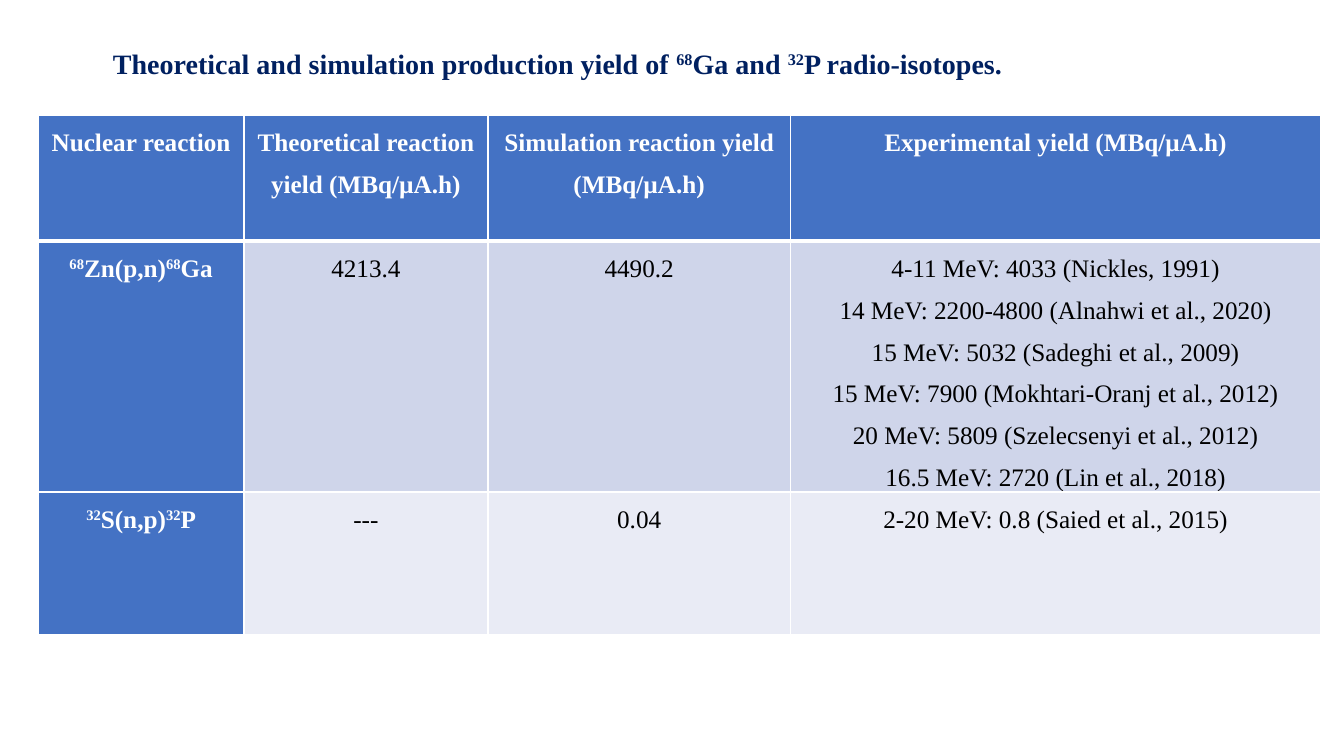
"""Build a slide with a table of radio-isotope production yields."""
from lxml.etree import SubElement
from pptx import Presentation
from pptx.dml.color import RGBColor
from pptx.enum.text import MSO_ANCHOR, PP_ALIGN
from pptx.oxml.ns import qn
from pptx.util import Inches, Pt

HUES = {"navy": "002060", "blue": "4472C4", "white": "FFFFFF",
        "black": "000000", "odd": "CFD5EA", "even": "E9EBF5"}
COLS = [2.04, 2.42, 3, 5.26]
ROWS = [1.25, 2.33, 1.42]
DATA = [
    ["Nuclear reaction", "Theoretical reaction yield (MBq/µA.h)",
     "Simulation reaction yield (MBq/µA.h)", "Experimental yield (MBq/μA.h)"],
    ["^68^Zn(p,n)^68^Ga", "4213.4", "4490.2",
     "4-11 MeV: 4033 (Nickles, 1991)\n"
     "14 MeV: 2200-4800 (Alnahwi et al., 2020)\n"
     "15 MeV: 5032 (Sadeghi et al., 2009)\n"
     "15 MeV: 7900 (Mokhtari-Oranj et al., 2012)\n"
     "20 MeV: 5809 (Szelecsenyi et al., 2012)\n"
     "16.5 MeV: 2720 (Lin et al., 2018)"],
    ["^32^S(n,p)^32^P", "---", "0.04", "2-20 MeV: 0.8 (Saied et al., 2015)"],
]


def write(frame, text, size=18, hue="black", bold=False,
          align=PP_ALIGN.CENTER, lead=1.5):
    """Fill a frame line by line, raising whatever stands between carets."""
    for i, line in enumerate(text.split("\n")):
        para = frame.add_paragraph() if i else frame.paragraphs[0]
        para.alignment, para.line_spacing = align, lead
        for j, part in enumerate(line.split("^")):
            if not part:
                continue
            run = para.add_run()
            run.text = part
            font = run.font
            font.name, font.size, font.bold = "Times New Roman", Pt(size), bold
            font.color.rgb = RGBColor.from_string(HUES[hue])
            if j % 2:
                font._element.set("baseline", "30000")


def edge(cell, side, width):
    """Draw one white border of a cell."""
    line = SubElement(cell._tc.get_or_add_tcPr(), qn("a:ln" + side),
                      w=str(Pt(width)))
    fill = SubElement(line, qn("a:solidFill"))
    SubElement(fill, qn("a:srgbClr"), val=HUES["white"])


deck = Presentation()
deck.slide_width, deck.slide_height = Inches(13.33), Inches(7.5)
slide = deck.slides.add_slide(deck.slide_layouts[5])

title = slide.shapes.title
title.left, title.top = Inches(1.02), Inches(0.41)
title.width, title.height = Inches(9.52), Inches(0.44)
title.text_frame.vertical_anchor = MSO_ANCHOR.TOP
write(title.text_frame, "Theoretical and simulation production yield of "
      "^68^Ga and ^32^P radio-isotopes.", size=20, hue="navy", bold=True,
      align=PP_ALIGN.LEFT, lead=1)

table = slide.shapes.add_table(
    len(ROWS), len(COLS), Inches(0.38), Inches(1.14),
    Inches(sum(COLS)), Inches(sum(ROWS))).table
table.first_col = True
for col, width in zip(table.columns, COLS):
    col.width = Inches(width)
for r, texts in enumerate(DATA):
    table.rows[r].height = Inches(ROWS[r])
    for c, text in enumerate(texts):
        cell = table.cell(r, c)
        head = r == 0 or c == 0
        cell.margin_left = cell.margin_right = Inches(0.07)
        cell.margin_top = cell.margin_bottom = 0
        for side in "LRTB":
            edge(cell, side, 3 if (r, side) in [(0, "B"), (1, "T")] else 1)
        cell.fill.solid()
        shade = "blue" if head else "odd" if r % 2 else "even"
        cell.fill.fore_color.rgb = RGBColor.from_string(HUES[shade])
        write(cell.text_frame, text, hue="white" if head else "black", bold=head)

deck.save("out.pptx")
